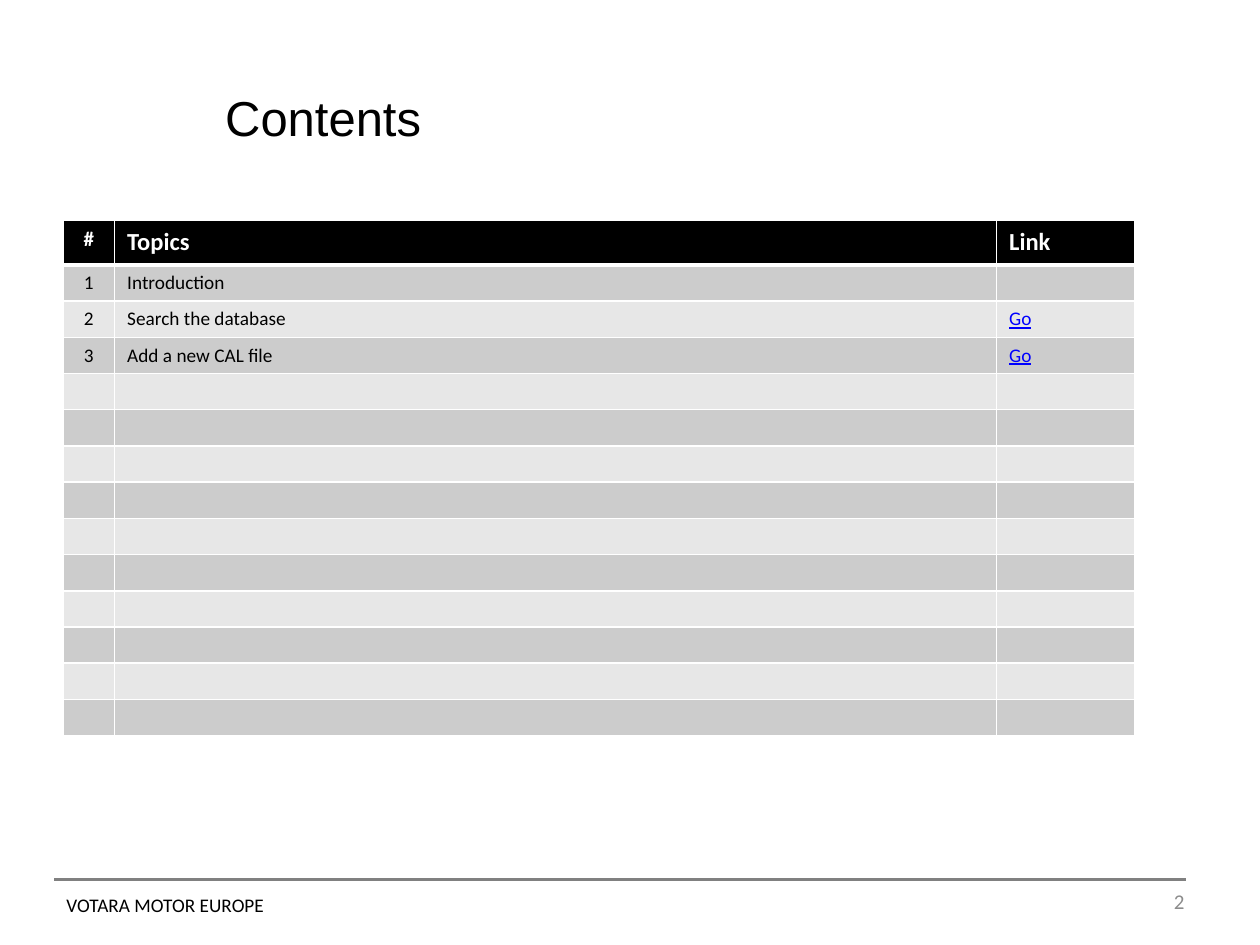
from pptx import Presentation
from pptx.dml.color import RGBColor
from pptx.enum.shapes import MSO_CONNECTOR
from pptx.enum.text import MSO_ANCHOR, PP_ALIGN
from pptx.oxml.ns import qn
from pptx.util import Cm, Pt
from lxml import etree

BLACK = RGBColor(0x00, 0x00, 0x00)
WHITE = RGBColor(0xFF, 0xFF, 0xFF)
DARK_BAND = RGBColor(0xCC, 0xCC, 0xCC)
LIGHT_BAND = RGBColor(0xE7, 0xE7, 0xE7)
LINK_BLUE = RGBColor(0x00, 0x00, 0xFF)
RULE_GRAY = RGBColor(0x80, 0x80, 0x80)
NUMBER_GRAY = RGBColor(0x8C, 0x8C, 0x8C)

LEFT, CENTER, RIGHT = PP_ALIGN.LEFT, PP_ALIGN.CENTER, PP_ALIGN.RIGHT
TOP, MIDDLE = MSO_ANCHOR.TOP, MSO_ANCHOR.MIDDLE
STRAIGHT = MSO_CONNECTOR.STRAIGHT

HEADER = ("#", "Topics", "Link")
TOPICS = [
    ("1", "Introduction", ""),
    ("2", "Search the database", "Go"),
    ("3", "Add a new CAL file", "Go"),
]
EMPTY_ROWS = 10
COLUMN_WIDTHS = (1.04, 17.78, 2.79)
HEADER_HEIGHT, ROW_HEIGHT = 0.89, 0.73


def write_text(paragraph, text, size, color, alignment=LEFT, **font_values):
    """Write one formatted run into a paragraph."""
    paragraph.alignment = alignment
    run = paragraph.add_run()
    run.text = text
    run.font.color.rgb = color
    values = {"name": "Calibri", "size": Pt(size), **font_values}
    for attribute, value in values.items():
        setattr(run.font, attribute, value)


def add_label(slide, box, text, size, color, anchor=TOP, wrap=True, **text_values):
    """Add a text box holding one line of text."""
    shape = slide.shapes.add_textbox(*(Cm(length) for length in box))
    frame = shape.text_frame
    frame.word_wrap = wrap
    frame.vertical_anchor = anchor
    write_text(frame.paragraphs[0], text, size, color, **text_values)


def set_borders(cell, top_width, bottom_width):
    """Draw white borders around a table cell."""
    properties = cell._tc.get_or_add_tcPr()
    widths = {"a:lnL": 1, "a:lnR": 1, "a:lnT": top_width, "a:lnB": bottom_width}
    for tag, width in widths.items():
        line = etree.SubElement(properties, qn(tag), w=str(Pt(width)))
        fill = etree.SubElement(line, qn("a:solidFill"))
        etree.SubElement(fill, qn("a:srgbClr"), val=str(WHITE))


def fill_cell(cell, text, fill, size, color, alignment, **font_values):
    """Fill a table cell and write its text, or keep an empty line of that size."""
    cell.fill.solid()
    cell.fill.fore_color.rgb = fill
    paragraph = cell.text_frame.paragraphs[0]
    if text:
        write_text(paragraph, text, size, color, alignment, **font_values)
    else:
        line_end = etree.SubElement(paragraph._p, qn("a:endParaRPr"))
        line_end.set("sz", str(size * 100))


def add_contents_table(slide, left, top):
    """Add the numbered list of topics as a banded table."""
    rows = TOPICS + [("", "", "")] * EMPTY_ROWS
    width = sum(COLUMN_WIDTHS)
    height = HEADER_HEIGHT + ROW_HEIGHT * len(rows)
    frame = slide.shapes.add_table(
        len(rows) + 1, len(COLUMN_WIDTHS), Cm(left), Cm(top), Cm(width), Cm(height)
    )
    table = frame.table
    for column, column_width in zip(table.columns, COLUMN_WIDTHS):
        column.width = Cm(column_width)

    table.rows[0].height = Cm(HEADER_HEIGHT)
    alignments = (CENTER, LEFT, LEFT)
    for column, (text, size) in enumerate(zip(HEADER, (12, 14, 14))):
        cell = table.cell(0, column)
        set_borders(cell, 1, 3)
        fill_cell(cell, text, BLACK, size, WHITE, alignments[column], bold=True)

    for row, texts in enumerate(rows, start=1):
        table.rows[row].height = Cm(ROW_HEIGHT)
        band = DARK_BAND if row % 2 else LIGHT_BAND
        for column, text in enumerate(texts):
            cell = table.cell(row, column)
            is_link = column == 2
            set_borders(cell, 3 if row == 1 else 1, 1)
            fill_cell(cell, text, band, 11, LINK_BLUE if is_link else BLACK,
                      alignments[column], bold=False, underline=is_link)


def add_footer(slide, left, top, width):
    """Add the rule, company name and slide number."""
    rule = slide.shapes.add_connector(
        STRAIGHT, Cm(left), Cm(top), Cm(left + width), Cm(top)
    )
    rule.line.color.rgb = RULE_GRAY
    rule.line.width = Pt(2.25)
    etree.SubElement(rule._element.spPr, qn("a:effectLst"))

    add_label(slide, (left + 17.12, top - 0.08, 5.92, 1.02), "2", 12, NUMBER_GRAY,
              anchor=MIDDLE, alignment=RIGHT)
    add_label(slide, (left, top + 0.15, 4.57, 0.74), "VOTARA MOTOR EUROPE", 11, BLACK,
              wrap=False)


def main():
    """Build the contents slide."""
    presentation = Presentation()
    presentation.slide_width = Cm(25.4)
    presentation.slide_height = Cm(19.05)
    slide = presentation.slides.add_slide(presentation.slide_layouts[6])
    add_label(slide, (4.29, 0.76, 19.84, 3.18), "Contents", 28, BLACK,
              anchor=MIDDLE, name="Arial")
    add_contents_table(slide, 1.27, 4.45)
    add_footer(slide, 1.09, 17.73, 22.81)
    presentation.save("out.pptx")


if __name__ == "__main__":
    main()
